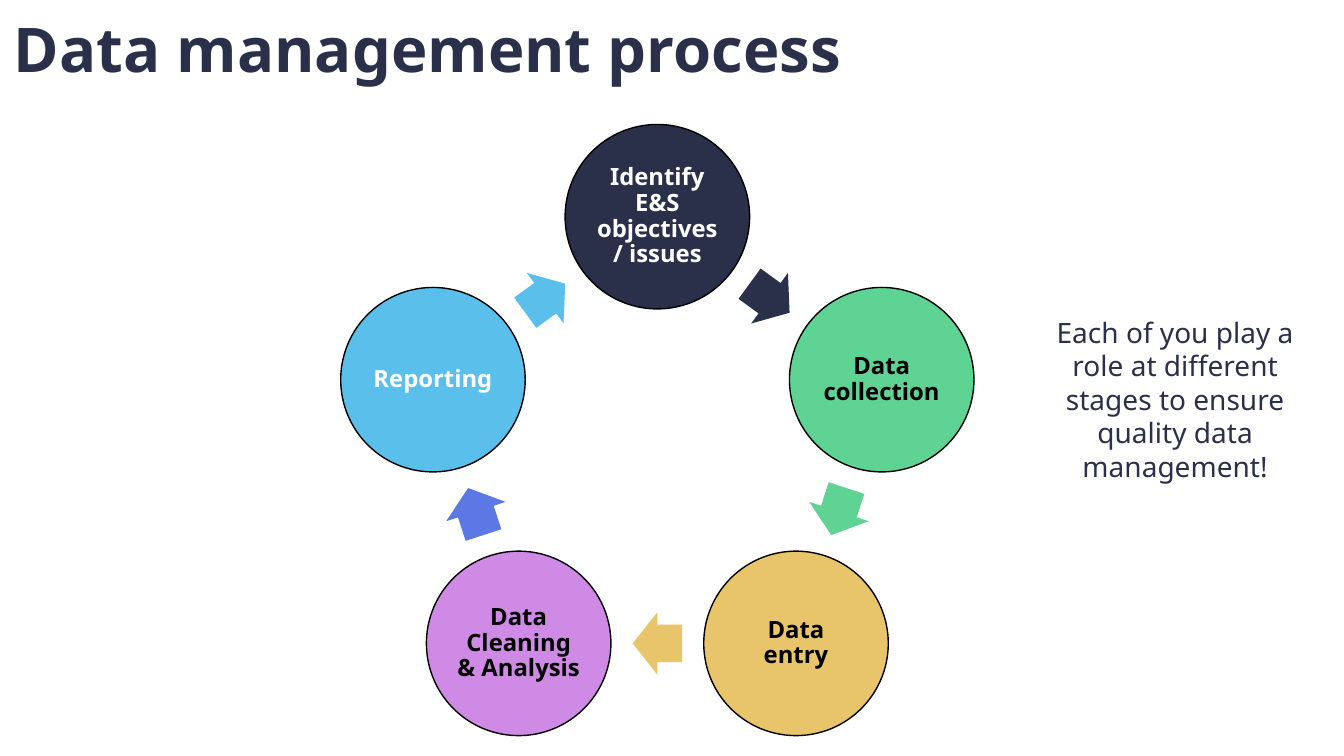
from math import cos, radians, sin

from pptx import Presentation
from pptx.dml.color import RGBColor
from pptx.enum.shapes import MSO_SHAPE
from pptx.enum.text import MSO_ANCHOR, PP_ALIGN
from pptx.util import Inches, Pt

OVAL, ARROW = MSO_SHAPE.OVAL, MSO_SHAPE.RIGHT_ARROW
MIDDLE = MSO_ANCHOR.MIDDLE
LEFT, CENTER = PP_ALIGN.LEFT, PP_ALIGN.CENTER

FONT = "Noto Sans"
COLORS = {
    "navy": "2A3049", "green": "5FD394", "gold": "E8C46A", "violet": "CE8AE4",
    "blue": "5B78E4", "sky": "5AC0EB", "white": "FFFFFF", "black": "000000",
}
# Label, circle fill, text colour, colour of the arrow to the next stage
STAGES = [
    ("Identify E&S objectives / issues", "navy", "white", "navy"),
    ("Data collection", "green", "black", "green"),
    ("Data entry", "gold", "black", "gold"),
    ("Data Cleaning & Analysis", "violet", "black", "blue"),
    ("Reporting", "sky", "white", "sky"),
]
DISC = 1.83
ARROW_W, ARROW_H = 0.49, 0.62


def color(name):
    return RGBColor.from_string(COLORS[name])


def write(shape, text, size, hue, align=CENTER, bold=False):
    frame = shape.text_frame
    frame.word_wrap = True
    frame.vertical_anchor = MIDDLE
    para = frame.paragraphs[0]
    para.alignment = align
    run = para.add_run()
    run.text = text
    font = run.font
    font.name, font.size, font.bold = FONT, Pt(size), bold
    font.color.rgb = color(hue)
    return frame


def add_centered(shapes, kind, x, y, width, height, fill):
    shape = shapes.add_shape(kind, Inches(x - width / 2), Inches(y - height / 2),
                             Inches(width), Inches(height))
    shape.shadow.inherit = False
    shape.fill.solid()
    shape.fill.fore_color.rgb = color(fill)
    return shape


def add_stage(shapes, x, y, label, fill, hue):
    disc = add_centered(shapes, OVAL, x, y, DISC, DISC, fill)
    disc.line.color.rgb = color("black")
    disc.line.width = Pt(1)
    frame = write(disc, label, 17, hue, bold=True)
    frame.margin_left = frame.margin_right = Inches(0.02)
    frame.margin_top = frame.margin_bottom = Inches(0.02)
    para = frame.paragraphs[0]
    para.line_spacing = 0.9
    para.space_after = Pt(6)


def add_arrow(shapes, x, y, turn, fill):
    arrow = add_centered(shapes, ARROW, x, y, ARROW_W, ARROW_H, fill)
    arrow.adjustments[0], arrow.adjustments[1] = 0.6, 0.5
    arrow.line.fill.background()
    arrow.rotation = turn


def add_cycle(slide, x, y, radius):
    """Stages clockwise from the top of a ring centred on x, y."""
    shapes = slide.shapes.add_group_shape().shapes
    step = 360 / len(STAGES)
    # Arrows sit halfway along the chord between two stages
    inner = radius * cos(radians(step / 2))
    for i, (label, fill, hue, tint) in enumerate(STAGES):
        angle = radians(i * step)
        add_stage(shapes, x + radius * sin(angle), y - radius * cos(angle),
                  label, fill, hue)
        turn = (i + 0.5) * step
        angle = radians(turn)
        add_arrow(shapes, x + inner * sin(angle), y - inner * cos(angle), turn, tint)


def add_text(slide, box, text, size, align, bold=False):
    shape = slide.shapes.add_textbox(*map(Inches, box))
    write(shape, text, size, "navy", align, bold)


def main():
    deck = Presentation()
    deck.slide_width, deck.slide_height = Inches(13.33), Inches(7.5)
    slide = deck.slides.add_slide(deck.slide_layouts[6])

    # Process ring
    add_cycle(slide, 6.52, 4.49, 2.34)
    # Side note
    add_text(slide, (10.22, 2.34, 2.87, 3.24),
             "Each of you play a role at different stages to ensure "
             "quality data management!", 20, CENTER)
    # Title
    add_text(slide, (0.04, -0.01, 11.5, 0.97), "Data management process",
             44, LEFT, bold=True)

    deck.save("out.pptx")


if __name__ == "__main__":
    main()
